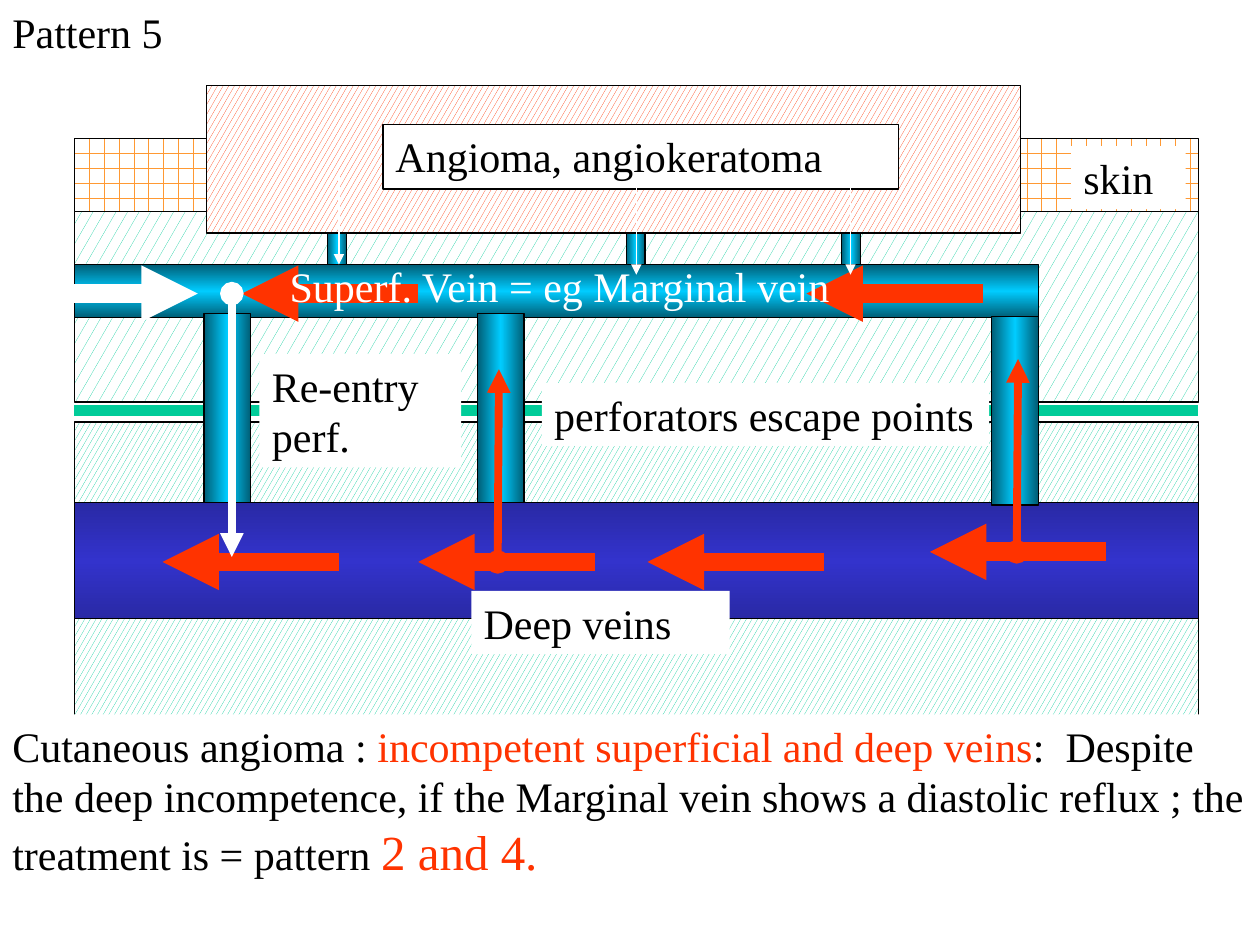
from copy import deepcopy

from lxml.etree import SubElement
from pptx import Presentation
from pptx.dml.color import RGBColor
from pptx.enum.dml import MSO_PATTERN
from pptx.enum.shapes import MSO_CONNECTOR, MSO_SHAPE
from pptx.enum.text import MSO_AUTO_SIZE
from pptx.oxml.ns import qn
from pptx.util import Inches, Pt

COLORS = {
    "black": "000000",
    "white": "FFFFFF",
    "red": "FF3300",
    "green": "00CC99",
    "orange": "FF9933",
    "vein_edge": "005E76",
    "vein_core": "00CCFF",
    "deep_edge": "2929A5",
    "deep_core": "3333CC",
}
FONT = "Times New Roman"
LEFT, WIDTH = 0.59, 8.92
PERFORATOR_WIDTH = 0.37
FLOW_LENGTH = 1.4


def color(name):
    return RGBColor.from_string(COLORS[name])


def add_block(slide, left, top, width, height):
    """Rectangle with a thin black outline."""
    shape = slide.shapes.add_shape(
        MSO_SHAPE.RECTANGLE, Inches(left), Inches(top), Inches(width), Inches(height))
    shape.shadow.inherit = False
    shape.line.color.rgb = color("black")
    shape.line.width = Pt(0.75)
    return shape


def add_tissue(slide, left, top, width, height, pattern, ink):
    fill = add_block(slide, left, top, width, height).fill
    fill.patterned()
    fill.pattern = pattern
    fill.fore_color.rgb = color(ink)
    fill.back_color.rgb = color("white")


def add_vein(slide, left, top, width, height, angle=0, kind="vein"):
    """Tube shaded from dark edges to a bright core."""
    shape = add_block(slide, left, top, width, height)
    shape.fill.gradient()
    shape.fill.gradient_angle = angle
    stop_list = shape._element.spPr.find(qn("a:gradFill")).find(qn("a:gsLst"))
    stop_list.append(deepcopy(stop_list[-1]))
    for stop, position, part in zip(
            shape.fill.gradient_stops, (0, 0.5, 1), ("edge", "core", "edge")):
        stop.position = position
        stop.color.rgb = color(f"{kind}_{part}")


def add_line(slide, start, end, ink, width, head=None, tail=None):
    connector = slide.shapes.add_connector(
        MSO_CONNECTOR.STRAIGHT, *map(Inches, (*start, *end)))
    connector.line.color.rgb = color(ink)
    connector.line.width = Pt(width)
    properties = connector._element.spPr
    for tag, kind in (("a:headEnd", head), ("a:tailEnd", tail)):
        if kind:
            SubElement(properties.find(qn("a:ln")), qn(tag), type=kind)
    SubElement(properties, qn("a:effectLst"))


def add_flow(slide, start_x, y):
    """Thick red arrow for flow to the left."""
    add_line(slide, (start_x, y), (start_x - FLOW_LENGTH, y), "red", 10.75, tail="triangle")


def add_path(slide, start, end, ink):
    """Arrow that starts with a dot, following a perforator."""
    add_line(slide, start, end, ink, 4.5, head="oval", tail="triangle")


def add_label(slide, left, top, width, height, runs, filled=True, outlined=False):
    """Text box; runs are (text, color, size)."""
    box = slide.shapes.add_textbox(
        Inches(left), Inches(top), Inches(width), Inches(height))
    if filled:
        box.fill.solid()
        box.fill.fore_color.rgb = color("white")
    if outlined:
        box.line.color.rgb = color("black")
        box.line.width = Pt(0.75)
    frame = box.text_frame
    frame.word_wrap = True
    frame.auto_size = MSO_AUTO_SIZE.SHAPE_TO_FIT_TEXT
    paragraph = frame.paragraphs[0]
    paragraph.font.name = FONT
    for text, ink, size in runs:
        run = paragraph.add_run()
        run.text = text
        run.font.size = Pt(size)
        run.font.color.rgb = color(ink)


def main():
    presentation = Presentation()
    presentation.slide_width = Inches(10)
    presentation.slide_height = Inches(7.5)
    slide = presentation.slides.add_slide(presentation.slide_layouts[6])

    # Tissue layers
    for top, height, pattern, ink in (
            (3.35, 3.08, MSO_PATTERN.LARGE_CONFETTI, "green"),
            (1.31, 1.88, MSO_PATTERN.SMALL_CONFETTI, "green"),
            (1.1, 0.58, MSO_PATTERN.HORIZONTAL_BRICK, "orange")):
        add_tissue(slide, LEFT, top, WIDTH, height, pattern, ink)

    # Superficial and deep veins, with the fascia between them
    add_vein(slide, LEFT, 2.1, 7.65, 0.42, angle=90)
    add_vein(slide, LEFT, 3.99, WIDTH, 0.92, angle=90, kind="deep")
    add_line(slide, (LEFT, 3.26), (LEFT + WIDTH, 3.26), "green", 6)

    # Small feeders and escape perforators
    for left in (2.6, 4.97, 6.68):
        add_vein(slide, left, 1.68, 0.15, 0.42)
    for left, top in ((3.79, 2.49), (7.87, 2.51)):
        add_vein(slide, left, top, PERFORATOR_WIDTH, 1.5)

    # Angioma and labels
    add_tissue(slide, 1.64, 0.68, 6.46, 1.17, MSO_PATTERN.LARGE_CONFETTI, "red")
    add_label(slide, 3.04, 0.99, 4.09, 0.51,
              [("Angioma, angiokeratoma", "black", 24)], outlined=True)
    for text, left, top, width in (
            ("Deep veins", 3.74, 4.69, 2.05),
            ("skin", 8.5, 1.16, 0.91),
            ("perforators escape points", 4.3, 3.04, 3.55)):
        add_label(slide, left, top, width, 0.5, [(text, "black", 24)])

    # Reflux in the veins and drainage from the angioma
    for start_x, y in ((7.8, 2.33), (3.32, 2.33), (2.69, 4.46), (6.54, 4.46)):
        add_flow(slide, start_x, y)
    for x, top in ((6.75, 1.47), (2.69, 1.39), (5.05, 1.47)):
        add_line(slide, (x, top), (x, top + 0.71), "white", 0.75, tail="triangle")

    # Caption
    add_label(slide, 0, 5.67, 10, 1.37, [
        ("Cutaneous angioma : ", "black", 24),
        ("incompetent superficial and deep veins", "red", 24),
        (":  Despite the deep incompetence, if the Marginal vein shows a diastolic "
         "reflux ; the treatment is = pattern ", "black", 24),
        ("2 and 4.", "red", 28)])

    # Escape from the deep vein through the perforators
    escapes = ((8.78, 4.38, 8.07), (4.72, 4.46, 3.95))
    for start_x, y, _ in escapes:
        add_flow(slide, start_x, y)
    for _, y, x in reversed(escapes):
        add_path(slide, (x, y), (x + 0.01, y - 1.53), "red")

    # Re-entry perforator
    add_vein(slide, 1.62, 2.49, PERFORATOR_WIDTH, 1.5)
    add_label(slide, 2.2, 2.02, 4.55, 0.5,
              [("Superf. Vein = eg Marginal vein", "white", 24)], filled=False)
    add_line(slide, (LEFT, 2.33), (1.57, 2.33), "white", 10.75, tail="triangle")
    add_path(slide, (1.84, 2.33), (1.84, 4.42), "white")
    add_label(slide, 2.06, 2.81, 1.6, 0.9, [("Re-entry perf.", "black", 24)])

    # Title
    add_label(slide, 0, 0, 2.76, 0.5, [("Pattern 5", "black", 24)], filled=False)

    presentation.save("out.pptx")


if __name__ == "__main__":
    main()
